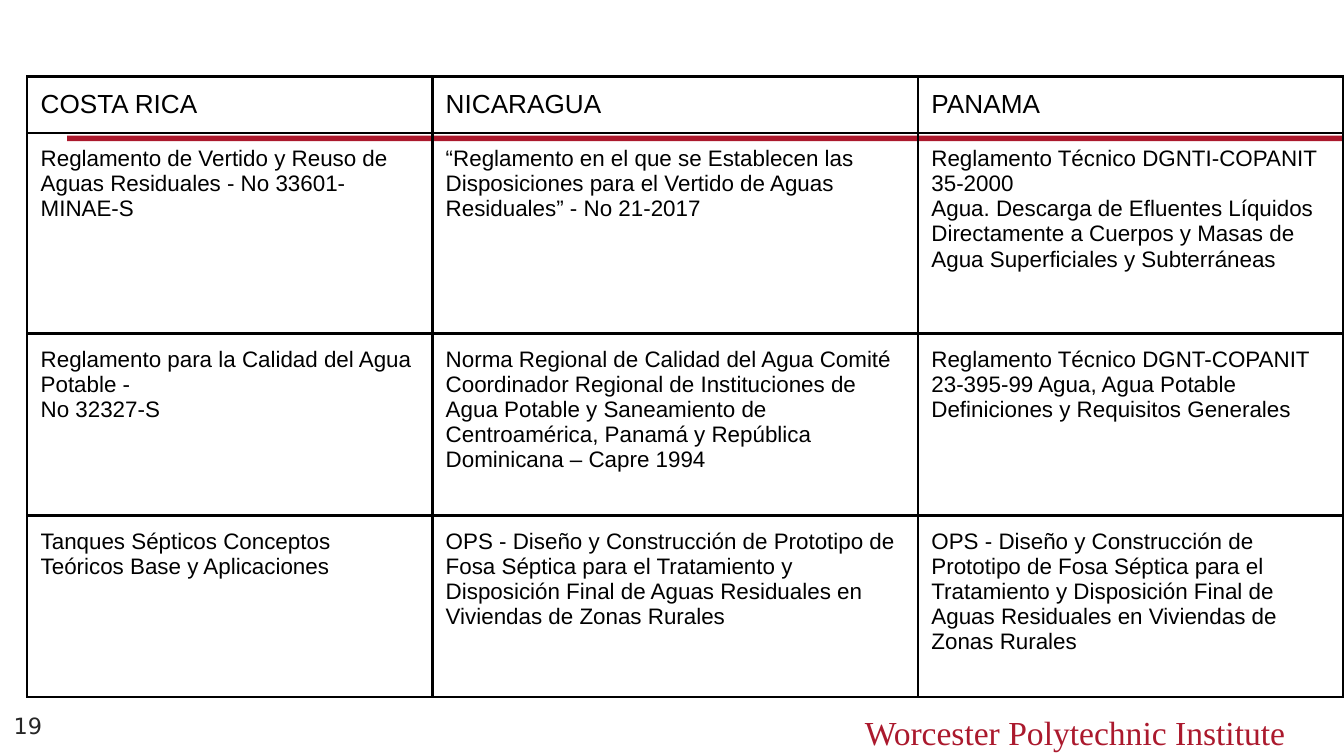
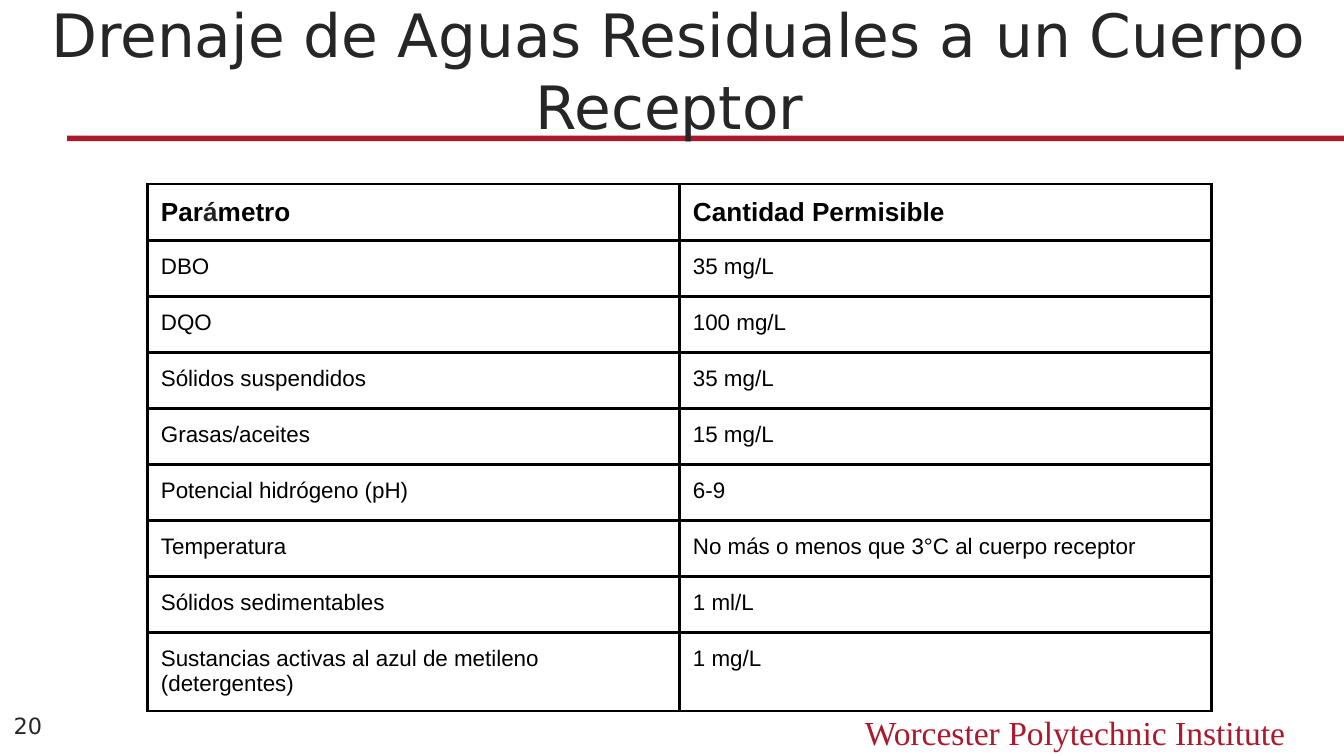
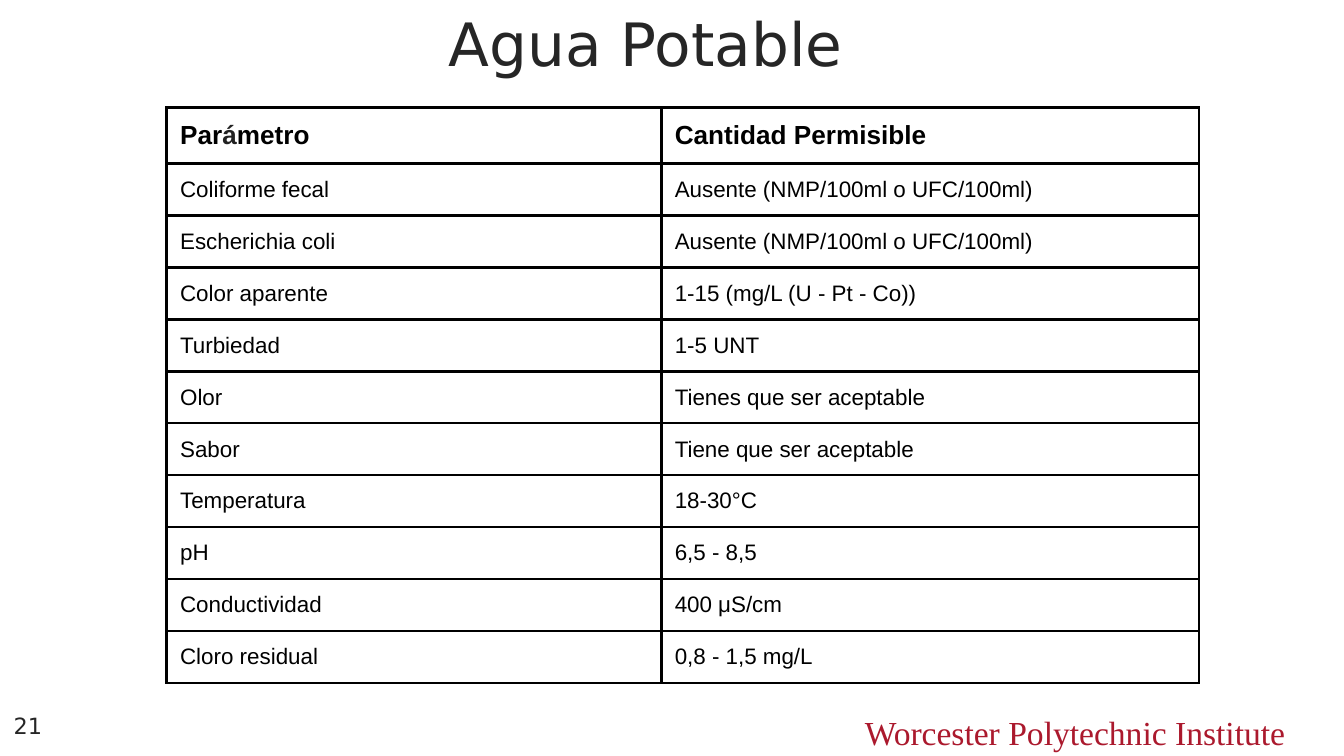
"""Build three slides on water regulations and permitted limits."""
from dataclasses import dataclass

import pptx
import pptx.dml.color
import pptx.enum.shapes
import pptx.enum.text
import pptx.oxml
import pptx.oxml.ns
import pptx.util

Pt = pptx.util.Pt
Align = pptx.enum.text.PP_ALIGN
Anchor = pptx.enum.text.MSO_ANCHOR


@dataclass(frozen=True)
class Theme:
    """Colours, fonts and type sizes shared by the slides."""
    crimson: str = "AB192D"
    white: str = "FFFFFF"
    black: str = "000000"
    charcoal: str = "262626"
    accent_letter: str = "222222"
    sans: str = "DejaVu Sans"
    serif: str = "Times New Roman"
    table_font: str = "Arial"
    title_size: float = 32
    footer_size: float = 18
    header_size: float = 14
    body_size: float = 12
    cell_margin: float = 7.2
    cell_bottom: float = 6.2
    border_width: float = 1.5


@dataclass(frozen=True)
class Box:
    """A rectangle in points."""
    left: float
    top: float
    width: float
    height: float

    def lengths(self):
        """Return the four sides as lengths."""
        return [Pt(value) for value in (self.left, self.top, self.width, self.height)]


THEME = Theme()
SLIDE = Box(0, 0, 720, 405)
RULE = Box(36, 72.72, 684, 2.88)
FOOTER = Box(431.6, 378, 264.24, 21.6)
PAGE_NUMBER = Box(0.2, 377.28, 36, 23.04)

REGULATIONS = [
    ["COSTA RICA", "NICARAGUA", "PANAMA"],
    ["Reglamento de Vertido y Reuso de Aguas Residuales - No 33601-MINAE-S",
     "“Reglamento en el que se Establecen las Disposiciones para el Vertido "
     "de Aguas Residuales” - No 21-2017",
     "Reglamento Técnico DGNTI-COPANIT 35-2000\n"
     "Agua. Descarga de Efluentes Líquidos Directamente a Cuerpos y Masas "
     "de Agua Superficiales y Subterráneas"],
    ["Reglamento para la Calidad del Agua Potable -\nNo 32327-S",
     "Norma Regional de Calidad del Agua Comité Coordinador Regional de "
     "Instituciones de Agua Potable y Saneamiento de Centroamérica, Panamá "
     "y República Dominicana – Capre 1994",
     "Reglamento Técnico DGNT-COPANIT 23-395-99 Agua, Agua Potable "
     "Definiciones y Requisitos Generales"],
    ["Tanques Sépticos Conceptos Teóricos Base y Aplicaciones"]
    + ["OPS - Diseño y Construcción de Prototipo de Fosa Séptica para el "
       "Tratamiento y Disposición Final de Aguas Residuales en Viviendas de "
       "Zonas Rurales"] * 2,
]

LIMITS_HEADER = ["Parámetro", "Cantidad Permisible"]

DISCHARGE_LIMITS = [
    LIMITS_HEADER,
    ["DBO", "35 mg/L"],
    ["DQO", "100 mg/L"],
    ["Sólidos suspendidos", "35 mg/L"],
    ["Grasas/aceites", "15 mg/L"],
    ["Potencial hidrógeno (pH)", "6-9"],
    ["Temperatura", "No más o menos que 3°C al cuerpo receptor"],
    ["Sólidos sedimentables", "1 ml/L"],
    ["Sustancias activas al azul de metileno (detergentes)", "1 mg/L"],
]

DRINKING_LIMITS = [
    LIMITS_HEADER,
    ["Coliforme fecal", "Ausente (NMP/100ml o UFC/100ml)"],
    ["Escherichia coli", "Ausente (NMP/100ml o UFC/100ml)"],
    ["Color aparente", "1-15 (mg/L (U - Pt - Co))"],
    ["Turbiedad", "1-5 UNT"],
    ["Olor", "Tienes que ser aceptable"],
    ["Sabor", "Tiene que ser aceptable"],
    ["Temperatura", "18-30°C"],
    ["pH", "6,5 - 8,5"],
    ["Conductividad", "400 μS/cm"],
    ["Cloro residual", "0,8 - 1,5 mg/L"],
]


def rgb(color):
    """Return a colour object for a hex value."""
    return pptx.dml.color.RGBColor.from_string(color)


def style_font(font, name, size, color, bold=False):
    """Set the face, size, colour and weight of a font."""
    font.name = name
    font.size = Pt(size)
    font.bold = bold
    font.color.rgb = rgb(color)


def add_rectangle(slide, box, fill, line=None):
    """Add a flat rectangle with an optional thin outline."""
    shape = slide.shapes.add_shape(
        pptx.enum.shapes.MSO_SHAPE.RECTANGLE, *box.lengths())
    shape.shadow.inherit = False
    shape.fill.solid()
    shape.fill.fore_color.rgb = rgb(fill)
    if line:
        shape.line.color.rgb = rgb(line)
        shape.line.width = Pt(0.75)
    else:
        shape.line.fill.background()


def add_text(slide, box, text, name, size, color, align=Align.LEFT, anchor=Anchor.TOP):
    """Add a wrapped text box holding one paragraph."""
    frame = slide.shapes.add_textbox(*box.lengths()).text_frame
    frame.word_wrap = True
    frame.vertical_anchor = anchor
    paragraph = frame.paragraphs[0]
    paragraph.text = text
    paragraph.alignment = align
    style_font(paragraph.font, name, size, color)


def add_title(slide, box, text):
    """Add a centred title that grows upwards from the foot of its box."""
    add_text(slide, box, text, THEME.sans, THEME.title_size, THEME.charcoal,
             Align.CENTER, Anchor.BOTTOM)


def add_frame(presentation, number):
    """Add a slide with the red rule, footer and page number."""
    slide = presentation.slides.add_slide(presentation.slide_layouts[6])
    add_rectangle(slide, RULE, THEME.crimson)
    add_text(slide, FOOTER, "Worcester Polytechnic Institute", THEME.serif,
             THEME.footer_size, THEME.crimson, Align.RIGHT)
    add_text(slide, PAGE_NUMBER, str(number), THEME.sans, THEME.body_size,
             THEME.charcoal, anchor=Anchor.MIDDLE)
    return slide


def set_borders(cell):
    """Draw the four borders of a cell and leave it unfilled."""
    properties = cell._tc.get_or_add_tcPr()
    for side in "LRTB":
        properties.append(pptx.oxml.parse_xml(
            f'<a:ln{side} {pptx.oxml.ns.nsdecls("a")} w="{Pt(THEME.border_width)}">'
            f'<a:solidFill><a:srgbClr val="{THEME.black}"/></a:solidFill></a:ln{side}>'))
    cell.fill.background()


def fill_cell(cell, text, size, bold):
    """Write one table cell with its margins and type style."""
    cell.margin_left = cell.margin_right = cell.margin_top = Pt(THEME.cell_margin)
    cell.margin_bottom = Pt(THEME.cell_bottom)
    cell.text = text
    for paragraph in cell.text_frame.paragraphs:
        style_font(paragraph.font, THEME.table_font, size, THEME.black, bold)
    set_borders(cell)


def tint_accent(cell):
    """Split the header word so its accented letter has its own colour."""
    paragraph = cell.text_frame.paragraphs[0]
    before, letter, after = paragraph.text.partition("á")
    paragraph.runs[0].text = before
    accent = paragraph.add_run()
    accent.text = letter
    accent.font.color.rgb = rgb(THEME.accent_letter)
    paragraph.add_run().text = after


def add_grid(slide, left, top, widths, heights, rows, bold_header=False):
    """Add a bordered table whose first row is a header."""
    box = Box(left, top, sum(widths), sum(heights))
    table = slide.shapes.add_table(len(rows), len(widths), *box.lengths()).table
    table.first_row = table.horz_banding = False
    for column, width in zip(table.columns, widths):
        column.width = Pt(width)
    for index, (row, height) in enumerate(zip(table.rows, heights)):
        row.height = Pt(height)
        header = index == 0
        size = THEME.header_size if header else THEME.body_size
        for cell, text in zip(row.cells, rows[index]):
            fill_cell(cell, text, size, header and bold_header)
    return table


def add_limits(slide, left, top, widths, row_height, rows):
    """Add a table of parameters and permitted amounts."""
    table = add_grid(slide, left, top, widths, [row_height] * len(rows), rows, True)
    tint_accent(table.cell(0, 0))


def regulations_slide(presentation, number):
    """Build the comparison of regulations by country."""
    slide = add_frame(presentation, number)
    add_grid(slide, 14.6, 41, [217, 260.2, 228], [30, 107.5, 97.4, 97.4], REGULATIONS)


def discharge_slide(presentation, number):
    """Build the limits for wastewater discharge."""
    slide = add_frame(presentation, number)
    add_title(slide, Box(16.8, 31.9, 694.08, 47.52),
              "Drenaje de Aguas Residuales a un Cuerpo Receptor ")
    add_limits(slide, 79, 98.6, [285, 285], 30, DISCHARGE_LIMITS)


def drinking_slide(presentation, number):
    """Build the limits for drinking water over a covered rule."""
    slide = add_frame(presentation, number)
    add_title(slide, Box(27.1, -1.9, 648, 47.52), "Agua Potable ")
    add_rectangle(slide, Box(28.08, 59.76, 691.92, 63.36), THEME.white, THEME.white)
    add_limits(slide, 89.3, 57.5, [265, 288.2], 25.2, DRINKING_LIMITS)


def main():
    """Build and save the presentation."""
    presentation = pptx.Presentation()
    presentation.slide_width = Pt(SLIDE.width)
    presentation.slide_height = Pt(SLIDE.height)
    builders = [regulations_slide, discharge_slide, drinking_slide]
    for number, build in enumerate(builders, start=19):
        build(presentation, number)
    presentation.save("out.pptx")


if __name__ == "__main__":
    main()
